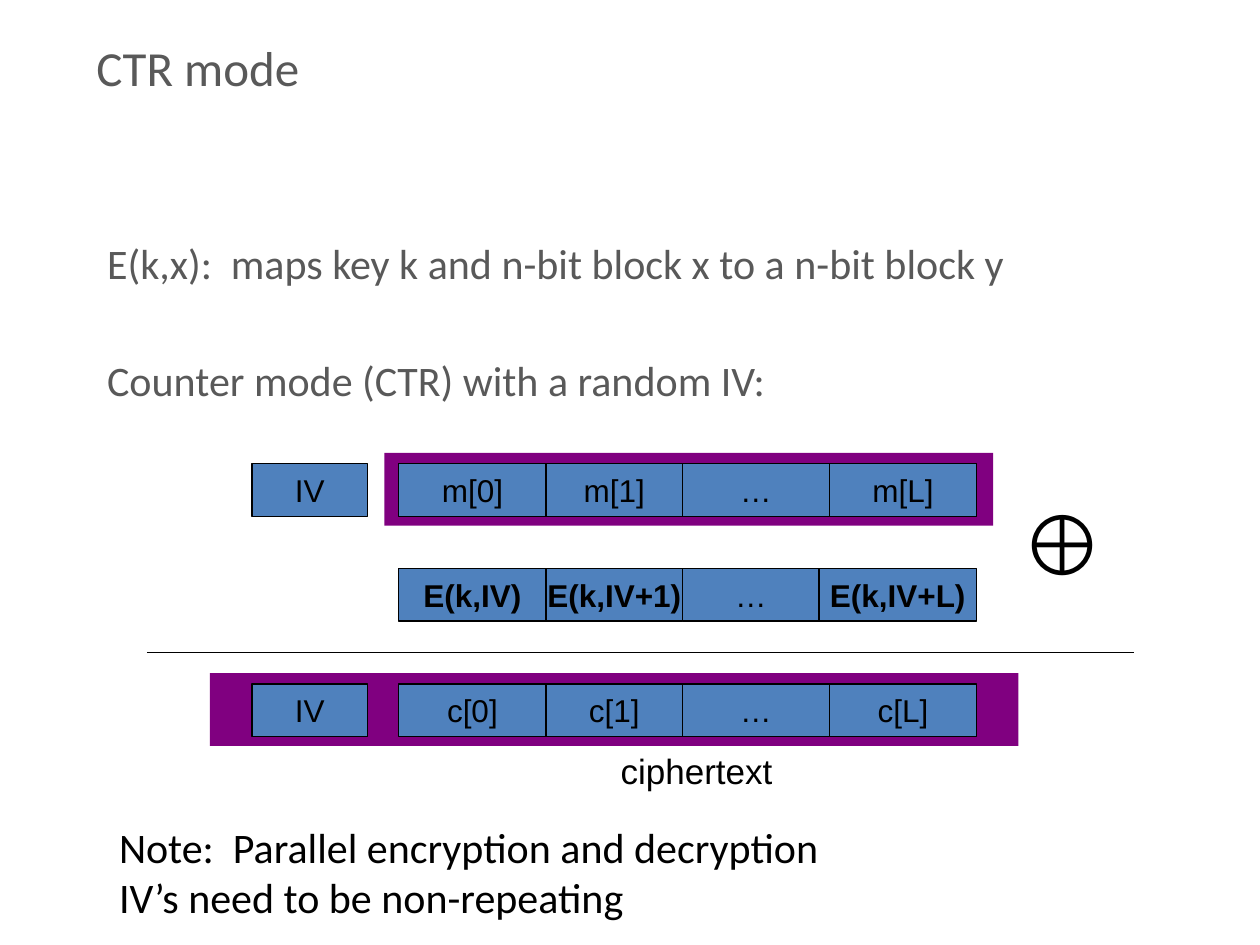
from itertools import pairwise

from lxml import etree
from pptx import Presentation
from pptx.dml.color import RGBColor
from pptx.enum.shapes import MSO_CONNECTOR, MSO_SHAPE
from pptx.enum.text import MSO_ANCHOR, MSO_AUTO_SIZE, PP_ALIGN
from pptx.oxml.ns import qn
from pptx.util import Cm, Pt

RECTANGLE = MSO_SHAPE.RECTANGLE
STRAIGHT = MSO_CONNECTOR.STRAIGHT
TOP, MIDDLE = MSO_ANCHOR.TOP, MSO_ANCHOR.MIDDLE
LEFT, CENTER = PP_ALIGN.LEFT, PP_ALIGN.CENTER
GROW = MSO_AUTO_SIZE.SHAPE_TO_FIT_TEXT

BLACK, GREY, BLUE, PURPLE = "000000", "595959", "4F81BD", "800080"

TITLE = "CTR mode"
INTRO = [
    "E(k,x):  maps key k and n-bit block x to a n-bit block y",
    "Counter mode (CTR) with a random IV:",
]
NOTES = ["Note:  Parallel encryption and decryption", "IV’s need to be non-repeating"]

IV_EDGES = [5.08, 7.41]
BLOCK_EDGES = [8.04, 11.01, 13.76, 16.72, 19.69]
KEYSTREAM_EDGES = [8.04, 11.01, 13.76, 16.51, 19.69]
BLOCK_HEIGHT = 1.06
BLOCK_ROWS = [
    (9.35, IV_EDGES, ["IV"]),
    (9.35, BLOCK_EDGES, ["m[0]", "m[1]", "…", "m[L]"]),
    (11.46, KEYSTREAM_EDGES, ["E(k,IV)", "E(k,IV+1)", "…", "E(k,IV+L)"]),
    (13.79, IV_EDGES, ["IV"]),
    (13.79, BLOCK_EDGES, ["c[0]", "c[1]", "…", "c[L]"]),
]
BANDS = [(7.75, 9.13, 12.27, 1.47), (4.23, 13.57, 16.3, 1.47)]
LABELS = [
    (["⊕"], (20.32, 9.78, 1.86, 2.31), 48, "Arial"),
    (["ciphertext"], (12.26, 14.99, 3.6, 1.09), 20, "Arial"),
    (NOTES, (2.15, 16.43, 14.78, 2.31), 24, "Calibri"),
]


def color(value):
    return RGBColor.from_string(value)


def write(frame, lines, size, font, ink=BLACK, align=LEFT, anchor=TOP,
          wrap=False, bold=False, gap=0):
    frame.word_wrap = wrap
    frame.vertical_anchor = anchor
    for index, line in enumerate(lines):
        paragraph = frame.add_paragraph() if index else frame.paragraphs[0]
        paragraph.text = line
        paragraph.alignment = align
        paragraph.space_before = Pt(gap if index else 0)
        paragraph.font.size = Pt(size)
        paragraph.font.name = font
        paragraph.font.bold = bold
        paragraph.font.color.rgb = color(ink)


def add_text(slide, lines, box, size, font, **style):
    text_box = slide.shapes.add_textbox(*map(Cm, box))
    write(text_box.text_frame, lines, size, font, **style)
    return text_box


def add_rectangle(slide, box, fill):
    shape = slide.shapes.add_shape(RECTANGLE, *map(Cm, box))
    shape.shadow.inherit = False
    shape.fill.solid()
    shape.fill.fore_color.rgb = color(fill)
    shape.line.fill.background()
    return shape


def add_block(slide, text, box):
    shape = add_rectangle(slide, box, BLUE)
    shape.line.color.rgb = color(BLACK)
    shape.line.width = Pt(0.75)
    write(shape.text_frame, [text], 18, "Arial", align=CENTER, anchor=MIDDLE,
          bold=text.startswith("E("))


def add_rule(slide, left, right, top):
    rule = slide.shapes.add_connector(STRAIGHT, Cm(left), Cm(top), Cm(right), Cm(top))
    rule.line.color.rgb = color(BLACK)
    rule.line.width = Pt(0.75)
    etree.SubElement(rule._element.spPr, qn("a:effectLst"))


def main():
    presentation = Presentation()
    presentation.slide_width, presentation.slide_height = Cm(25.4), Cm(19.05)
    slide = presentation.slides.add_slide(presentation.slide_layouts[5])

    title = slide.shapes.title
    title.left, title.top, title.width, title.height = map(Cm, (1.69, 0.62, 21.59, 2.75))
    write(title.text_frame, [TITLE], 28, "Calibri", ink=GREY, wrap=True)
    add_text(slide, INTRO, (1.91, 4.66, 22.65, 4.26), 24, "Calibri",
             ink=GREY, wrap=True, gap=38)

    for band in BANDS:
        add_rectangle(slide, band, PURPLE)
    for top, edges, texts in BLOCK_ROWS:
        for text, (left, right) in zip(texts, pairwise(edges)):
            add_block(slide, text, (left, top, right - left, BLOCK_HEIGHT))
    add_rule(slide, 2.96, 22.86, 13.15)
    for lines, box, size, font in LABELS:
        label = add_text(slide, lines, box, size, font)
        label.text_frame.auto_size = GROW

    presentation.save("out.pptx")


if __name__ == "__main__":
    main()
